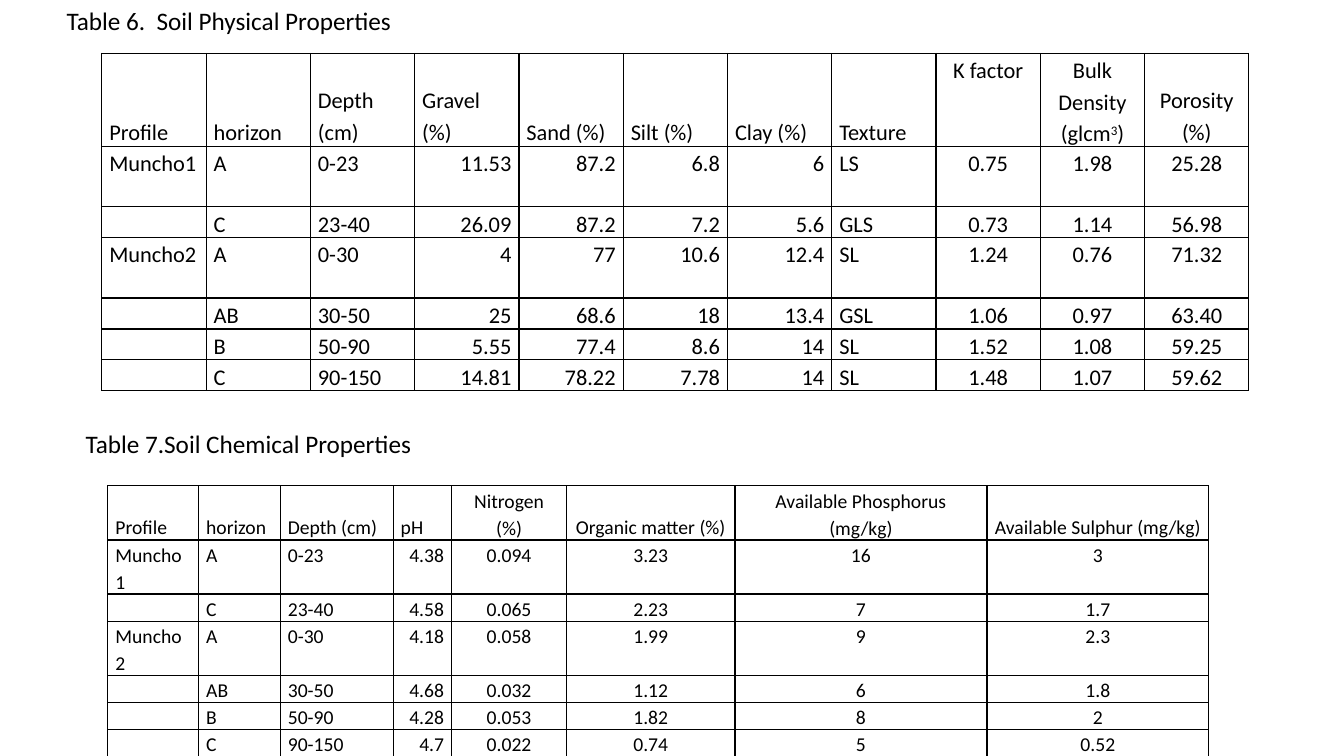
"""Builds a slide with two tables of soil properties."""
from lxml import etree
from pptx import Presentation
from pptx.dml.color import RGBColor
from pptx.enum.text import MSO_ANCHOR, MSO_AUTO_SIZE, PP_ALIGN
from pptx.oxml.ns import qn
from pptx.util import Inches, Pt

LEFT, CENTER, RIGHT = PP_ALIGN.LEFT, PP_ALIGN.CENTER, PP_ALIGN.RIGHT
TOP, BOTTOM = MSO_ANCHOR.TOP, MSO_ANCHOR.BOTTOM
FIT_SHAPE = MSO_AUTO_SIZE.SHAPE_TO_FIT_TEXT
BLACK = RGBColor(0, 0, 0)
FONT = "Calibri"
CELL_INSET = Pt(5.4)
BORDER_WIDTH = Pt(1)
SUPERSCRIPT_MARK = "^"

PHYSICAL = {
    "caption": "Table 6.  Soil Physical Properties",
    "caption_at": (0.56, 0, 3.46, 0.4),
    "table_at": (1.01, 0.53),
    "size": 16,
    "columns": [11.38 / 11] * 11,
    "heights": [0.92, 0.6, 0.29, 0.6, 0.29, 0.29, 0.29],
    "aligns": [LEFT] * 3 + [RIGHT] * 4 + [LEFT] + [CENTER] * 3,
    "top_headers": ["K factor"],
    "rows": [
        ("Profile", "horizon", "Depth (cm)", "Gravel (%)", "Sand (%)", "Silt (%)",
         "Clay (%)", "Texture", "K factor", "Bulk Density (glcm^3^)", "Porosity (%)"),
        ("Muncho1", "A", "0-23", "11.53", "87.2", "6.8", "6", "LS", "0.75", "1.98", "25.28"),
        ("", "C", "23-40", "26.09", "87.2", "7.2", "5.6", "GLS", "0.73", "1.14", "56.98"),
        ("Muncho2", "A", "0-30", "4", "77", "10.6", "12.4", "SL", "1.24", "0.76", "71.32"),
        ("", "AB", "30-50", "25", "68.6", "18", "13.4", "GSL", "1.06", "0.97", "63.40"),
        ("", "B", "50-90", "5.55", "77.4", "8.6", "14", "SL", "1.52", "1.08", "59.25"),
        ("", "C", "90-150", "14.81", "78.22", "7.78", "14", "SL", "1.48", "1.07", "59.62"),
    ],
}
CHEMICAL = {
    "caption": "Table 7.Soil Chemical Properties",
    "caption_at": (0.75, 4.2, 3.47, 0.4),
    "table_at": (1.07, 4.82),
    "size": 14,
    "columns": [0.9, 0.81, 1.12, 0.58, 1.14, 1.67, 2.5, 2.2],
    "heights": [0.23] * 7,
    "aligns": [LEFT] * 3 + [RIGHT] + [CENTER] * 4,
    "top_headers": [],
    "rows": [
        ("Profile", "horizon", "Depth (cm)", "pH", "Nitrogen (%)", "Organic matter (%)",
         "Available Phosphorus (mg/kg)", "Available Sulphur (mg/kg)"),
        ("Muncho1", "A", "0-23", "4.38", "0.094", "3.23", "16", "3"),
        ("", "C", "23-40", "4.58", "0.065", "2.23", "7", "1.7"),
        ("Muncho2", "A", "0-30", "4.18", "0.058", "1.99", "9", "2.3"),
        ("", "AB", "30-50", "4.68", "0.032", "1.12", "6", "1.8"),
        ("", "B", "50-90", "4.28", "0.053", "1.82", "8", "2"),
        ("", "C", "90-150", "4.7", "0.022", "0.74", "5", "0.52"),
    ],
}


def set_font(paragraph, size):
    paragraph.font.name = FONT
    paragraph.font.size = Pt(size)
    paragraph.font.color.rgb = BLACK


def write_caption(shape, content):
    shape.left, shape.top, shape.width, shape.height = map(Inches, content["caption_at"])
    frame = shape.text_frame
    frame.text = content["caption"]
    frame.word_wrap = False
    frame.auto_size = FIT_SHAPE
    frame.vertical_anchor = TOP
    paragraph = frame.paragraphs[0]
    paragraph.alignment = LEFT
    set_font(paragraph, 18)


def add_borders(cell):
    properties = cell._tc.get_or_add_tcPr()
    for side in ("a:lnL", "a:lnR", "a:lnT", "a:lnB"):
        line = etree.SubElement(properties, qn(side), w=str(BORDER_WIDTH))
        fill = etree.SubElement(line, qn("a:solidFill"))
        etree.SubElement(fill, qn("a:srgbClr"), val=str(BLACK))


def write_cell(cell, text, size, align, anchor):
    cell.margin_left = cell.margin_right = CELL_INSET
    cell.margin_top = cell.margin_bottom = 0
    cell.vertical_anchor = anchor
    add_borders(cell)
    cell.fill.background()
    paragraph = cell.text_frame.paragraphs[0]
    paragraph.alignment = align
    paragraph.line_spacing = 1.15
    set_font(paragraph, size)
    if not text:
        etree.SubElement(paragraph._p, qn("a:endParaRPr"), sz=str(size * 100))
        return
    for index, part in enumerate(text.split(SUPERSCRIPT_MARK)):
        run = paragraph.add_run()
        run.text = part
        if index % 2:
            run._r.get_or_add_rPr().set("baseline", "30000")


def add_soil_table(slide, content):
    rows, columns, heights = content["rows"], content["columns"], content["heights"]
    left, top = content["table_at"]
    table = slide.shapes.add_table(
        len(rows), len(columns), Inches(left), Inches(top),
        Inches(sum(columns)), Inches(sum(heights))).table
    table.first_row = table.horz_banding = False
    for column, width in zip(table.columns, columns):
        column.width = Inches(width)
    for row, height in zip(table.rows, heights):
        row.height = Inches(height)
    for r, values in enumerate(rows):
        for c, (text, align) in enumerate(zip(values, content["aligns"])):
            is_header = r == 0
            if is_header and align == RIGHT:
                align = LEFT
            at_bottom = is_header and text not in content["top_headers"]
            write_cell(table.cell(r, c), text, content["size"], align,
                       BOTTOM if at_bottom else TOP)


def main():
    deck = Presentation()
    deck.slide_width, deck.slide_height = Inches(13.33), Inches(7.5)
    slide = deck.slides.add_slide(deck.slide_layouts.get_by_name("Title Only"))
    write_caption(slide.shapes.title, PHYSICAL)
    add_soil_table(slide, PHYSICAL)
    chemical_caption = slide.shapes.add_textbox(*map(Inches, CHEMICAL["caption_at"]))
    write_caption(chemical_caption, CHEMICAL)
    add_soil_table(slide, CHEMICAL)
    deck.save("out.pptx")


if __name__ == "__main__":
    main()
